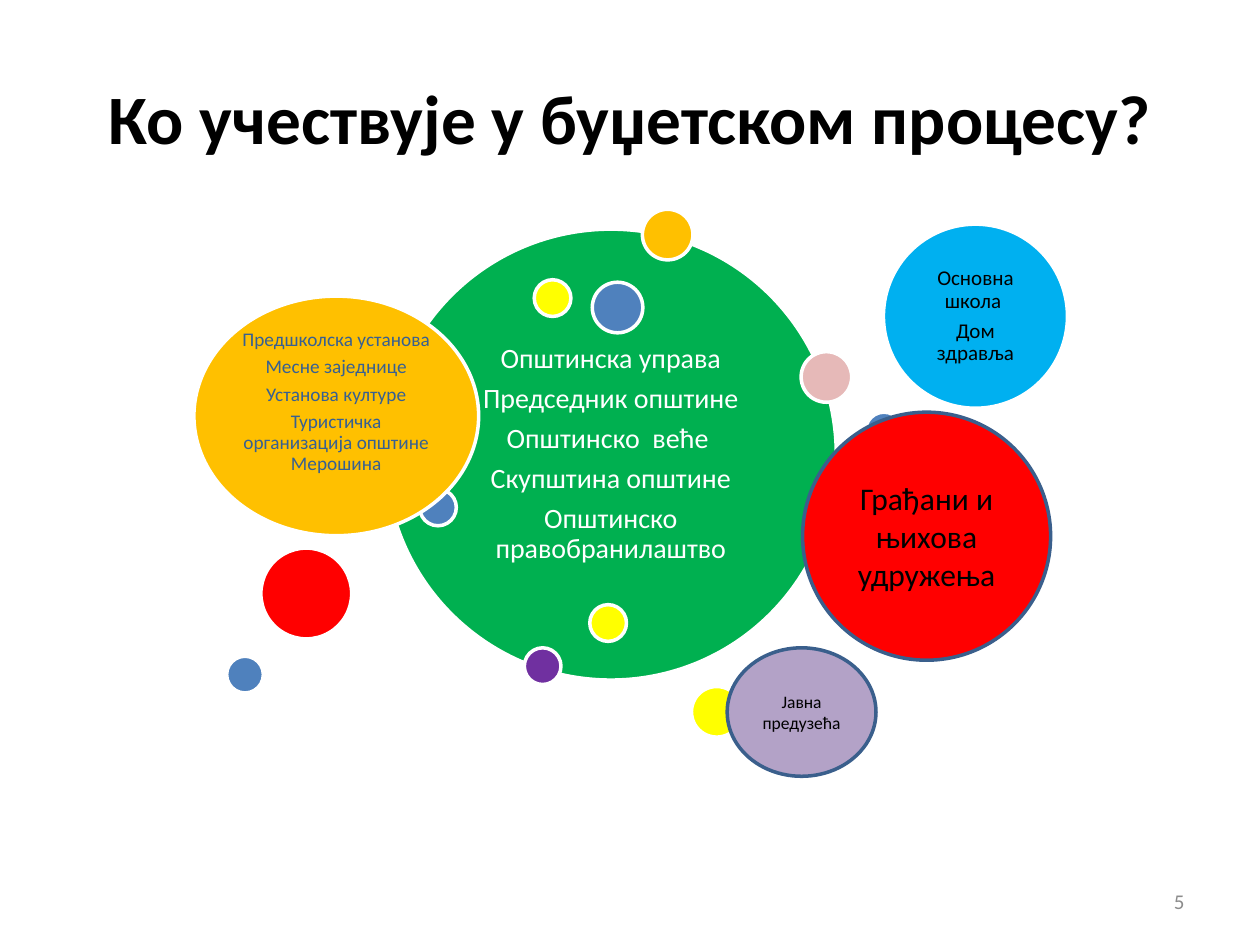
from pptx import Presentation
from pptx.dml.color import RGBColor
from pptx.enum.shapes import MSO_SHAPE
from pptx.enum.text import MSO_ANCHOR, PP_ALIGN
from pptx.util import Cm, Pt

FONT = "Calibri"
BLACK = RGBColor(0x00, 0x00, 0x00)
WHITE = RGBColor(0xFF, 0xFF, 0xFF)
GRAY = RGBColor(0x8C, 0x8C, 0x8C)
GREEN = RGBColor(0x00, 0xB0, 0x50)
ORANGE = RGBColor(0xFF, 0xC0, 0x00)
YELLOW = RGBColor(0xFF, 0xFF, 0x00)
PURPLE = RGBColor(0x70, 0x30, 0xA0)
LAVENDER = RGBColor(0xB3, 0xA2, 0xC7)
PINK = RGBColor(0xE6, 0xB9, 0xB8)
RED = RGBColor(0xFF, 0x00, 0x00)
SKY = RGBColor(0x00, 0xB0, 0xF0)
BLUE = RGBColor(0x4F, 0x81, 0xBD)
DARK_BLUE = RGBColor(0x37, 0x60, 0x92)
OUTLINE_BLUE = RGBColor(0x3A, 0x5F, 0x8C)

SMALL, MEDIUM, LARGE = 0.74, 1.02, 1.83  # dot diameters in cm


def format_paragraph(paragraph, size, color, alignment=PP_ALIGN.CENTER, bold=False):
    paragraph.alignment = alignment
    font = paragraph.font
    font.name, font.size, font.bold = FONT, Pt(size), bold
    font.color.rgb = color


def add_title(slide, text):
    title = slide.shapes.title
    title.left, title.top, title.width, title.height = Cm(1.27), Cm(0.76), Cm(22.86), Cm(3.18)
    title.text_frame.text = text
    title.text_frame.vertical_anchor = MSO_ANCHOR.MIDDLE
    format_paragraph(title.text_frame.paragraphs[0], 39.6, BLACK, bold=True)


def add_slide_number(slide, number):
    box = slide.shapes.add_textbox(Cm(18.21), Cm(17.65), Cm(5.92), Cm(1.02))
    frame = box.text_frame
    frame.word_wrap = True
    frame.vertical_anchor = MSO_ANCHOR.MIDDLE
    frame.text = str(number)
    format_paragraph(frame.paragraphs[0], 12, GRAY, PP_ALIGN.RIGHT)


def add_ellipse(slide, left, top, width, height, fill, outline=WHITE):
    ellipse = slide.shapes.add_shape(MSO_SHAPE.OVAL, Cm(left), Cm(top), Cm(width), Cm(height))
    ellipse.shadow.inherit = False
    ellipse.fill.solid()
    ellipse.fill.fore_color.rgb = fill
    ellipse.line.color.rgb = outline
    ellipse.line.width = Pt(2)
    return ellipse


def write_lines(ellipse, lines, size, color):
    frame = ellipse.text_frame
    frame.word_wrap = True
    frame.vertical_anchor = MSO_ANCHOR.MIDDLE
    frame.text = "\n".join(lines)
    for paragraph in frame.paragraphs:
        format_paragraph(paragraph, size, color)


def write_list(ellipse, lines, size, color, margin, extra_bottom=0):
    """Write tightly set paragraphs; extra_bottom lifts the centred text."""
    write_lines(ellipse, lines, size, color)
    frame = ellipse.text_frame
    frame.margin_left = frame.margin_right = frame.margin_top = Cm(margin)
    frame.margin_bottom = Cm(margin + extra_bottom)
    for paragraph in frame.paragraphs:
        paragraph.line_spacing = 0.9
        paragraph.space_after = Pt(round(0.35 * size, 1))


def add_dots(slide, dots):
    for left, top, diameter, fill in dots:
        add_ellipse(slide, left, top, diameter, diameter, fill)


def main():
    presentation = Presentation()
    presentation.slide_width, presentation.slide_height = Cm(25.4), Cm(19.05)
    slide = presentation.slides.add_slide(presentation.slide_layouts[5])
    add_title(slide, "Ко учествује у буџетском процесу?")
    add_slide_number(slide, 5)

    municipality = add_ellipse(slide, 7.77, 4.62, 9.09, 9.09, GREEN)
    write_list(municipality, [
        "Општинска управа", "Председник општине", "Општинско  веће ",
        "Скупштина општине", "Општинско правобранилаштво",
    ], 16, WHITE, 0.18)
    add_dots(slide, [
        (12.95, 4.22, MEDIUM, ORANGE),
        (10.57, 13.06, SMALL, PURPLE),
        (17.45, 8.31, SMALL, BLUE),
        (13.94, 13.84, MEDIUM, YELLOW),
        (10.77, 5.64, SMALL, YELLOW),
        (8.46, 9.86, SMALL, BLUE),
    ])

    institutions = add_ellipse(slide, 3.91, 5.97, 5.74, 4.83, ORANGE)
    write_list(institutions, [
        "Предшколска установа", "Месне заједнице", "Установа културе",
        "Туристичка организација општине Мерошина",
    ], 11, DARK_BLUE, 0.13, extra_bottom=0.56)

    school_and_health = add_ellipse(slide, 17.81, 4.52, 3.71, 3.71, SKY)
    write_list(school_and_health, ["Основна школа ", "Дом здравља"], 12, BLACK, 0.13)
    add_dots(slide, [
        (11.94, 5.69, MEDIUM, BLUE),
        (5.26, 11.05, LARGE, RED),
        (16.15, 7.09, MEDIUM, PINK),
        (4.57, 13.23, SMALL, BLUE),
        (11.89, 12.19, SMALL, YELLOW),
    ])

    citizens = add_ellipse(slide, 16.18, 8.31, 5, 5, RED, OUTLINE_BLUE)
    write_lines(citizens, ["Грађани и њихова удружења"], 18, BLACK)
    public_companies = add_ellipse(slide, 14.66, 13.06, 3, 2.59, LAVENDER, OUTLINE_BLUE)
    write_lines(public_companies, ["Јавна предузећа"], 10, BLACK)

    presentation.save("out.pptx")


if __name__ == "__main__":
    main()
